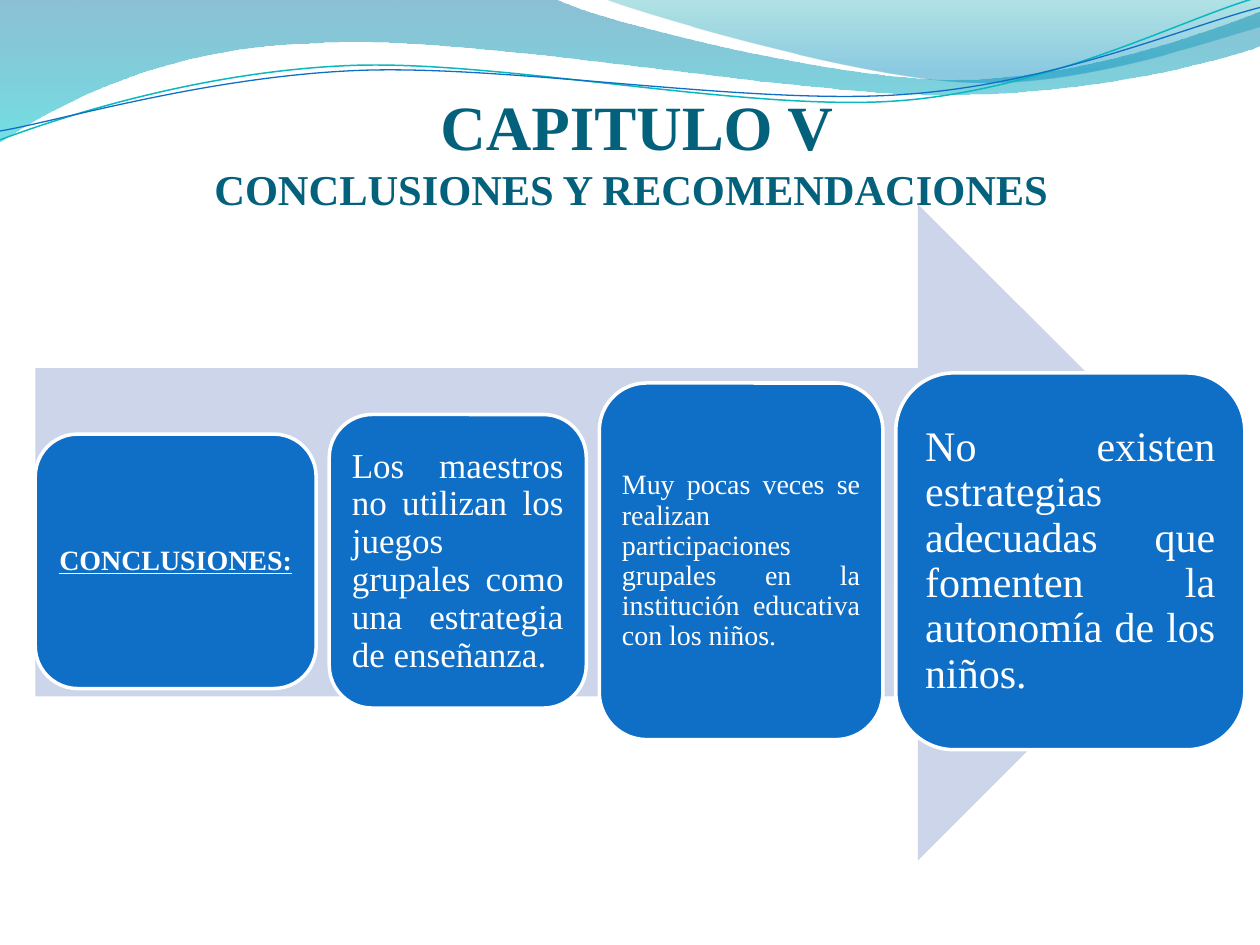
from math import cos, radians, sin

from lxml import etree
from pptx import Presentation
from pptx.dml.color import RGBColor
from pptx.enum.shapes import MSO_SHAPE
from pptx.enum.text import MSO_ANCHOR, PP_ALIGN
from pptx.oxml.ns import qn
from pptx.util import Inches, Pt

ARROW = MSO_SHAPE.RIGHT_ARROW
ROUND = MSO_SHAPE.ROUNDED_RECTANGLE
MIDDLE, BOTTOM = MSO_ANCHOR.MIDDLE, MSO_ANCHOR.BOTTOM
CENTER, JUSTIFY = PP_ALIGN.CENTER, PP_ALIGN.JUSTIFY

COLORS = {
    "title": "04617B", "card": "0F6FC6", "arrow": "CCD5EA", "white": "FFFFFF",
    "teal": "0AB8BF", "deep": "0074A1", "aqua": "00C6CF",
    "green": "00A1A9", "sky": "008BBF",
}
FONT = "Times New Roman"
TILT = 2.7
LEFT, RIGHT, AXIS = 0.28, 9.88, 4.455

WAVES = [
    ([(0, 0), (4.4, -0.01), (4.76, 0.17, 6.64, 0.63, 7.58, 0.63),
      (8.53, 0.63, 9.58, 0.26, 10, 0.09), (10.01, 0.36),
      (9.83, 0.44, 8.7, 0.76, 7.46, 0.75), (6.22, 0.75, 3.82, 0.28, 2.57, 0.34),
      (1.29, 0.36, 0.46, 0.83, -0.01, 1.13), (0, 0)],
     [("deep", 0, 45), ("aqua", 1, 55)]),
    ([(4.79, -0.01), (5.09, 0.11, 6.82, 0.62, 7.69, 0.65),
      (8.56, 0.69, 9.61, 0.32, 10, 0.21), (10, 0), (4.79, -0.01)],
     [("green", 0, 30), ("sky", 0.8, 45)]),
]
LINES = [
    ([(0, 1.11), (0.48, 0.93, 1.58, 0.57, 2.77, 0.52),
      (3.95, 0.47, 5.93, 0.89, 7.13, 0.8), (8.33, 0.71, 9.38, 0.15, 9.98, -0.02)],
     (4.99, 0.58), "teal", 0.85),
    ([(0, 1.04), (0.47, 0.96, 1.64, 0.61, 2.83, 0.56),
      (4.03, 0.51, 5.97, 0.84, 7.17, 0.75), (8.36, 0.67, 9.41, 0.21, 10, 0.06)],
     (5, 0.59), "card", 0.75),
]
CARDS = [
    (2.23, 2.02, 0.07, "CONCLUSIONES:",
     dict(size=16, bold=True, under=True, align=CENTER)),
    (2.04, 2.33, 0.08, "Los maestros no utilizan los juegos grupales como una "
     "estrategia de enseñanza.", dict(size=20)),
    (2.25, 2.83, 0.07, "Muy pocas veces se realizan participaciones grupales en la "
     "institución educativa con los niños.", dict(size=16)),
    (2.77, 2.99, 0.1, "No existen estrategias adecuadas que fomenten la autonomía "
     "de los niños.", dict(size=24)),
]


def tint(name):
    return RGBColor.from_string(COLORS[name])


def write(para, text, size=16, color="white", bold=False, under=False,
          align=JUSTIFY, space=0.9):
    para.alignment = align
    para.line_spacing = space
    run = para.add_run()
    run.text = text
    font = run.font
    font.name, font.size, font.bold, font.underline = FONT, Pt(size), bold, under
    font.color.rgb = tint(color)


def turn(node, pivot):
    px, py = pivot
    c, s = cos(radians(TILT)), sin(radians(TILT))
    spots = []
    for x, y in zip(node[::2], node[1::2]):
        spots += [px + (x - px) * c - (y - py) * s, py + (x - px) * s + (y - py) * c]
    return spots


class Deck:
    def __init__(self):
        self.show = Presentation()
        self.show.slide_width, self.show.slide_height = Inches(10), Inches(7.5)
        self.slide = self.show.slides.add_slide(self.show.slide_layouts[6])

    def outline(self, nodes, close):
        points = [(Inches(x), Inches(y)) for node in nodes
                  for x, y in zip(node[::2], node[1::2])]
        form = self.slide.shapes.build_freeform(*points[0])
        form.add_line_segments(points[1:], close=close)
        shape = form.convert_to_shape()
        shape.shadow.inherit = False
        steps = iter(list(shape.element.iter(qn("a:lnTo"))))
        for node in nodes[1:]:
            first = next(steps)
            if len(node) == 6:
                first.tag = qn("a:cubicBezTo")
                for step in (next(steps), next(steps)):
                    first.append(step[0])
                    step.getparent().remove(step)
        return shape

    def wave(self, nodes, stops):
        shape = self.outline(nodes, True)
        shape.line.fill.background()
        fill = shape.fill
        fill.gradient()
        fill.gradient_angle = 270
        for stop, (color, place, alpha) in zip(fill.gradient_stops, stops):
            stop.color.rgb = tint(color)
            stop.position = place
        tones = shape.element.spPr.iter(qn("a:srgbClr"))
        for tone, (color, place, alpha) in zip(list(tones), stops):
            etree.SubElement(tone, qn("a:alpha")).set("val", str(alpha * 1000))

    def curve(self, nodes, pivot, color, width):
        shape = self.outline([turn(node, pivot) for node in nodes], False)
        shape.rotation = 360 - TILT
        shape.fill.background()
        shape.line.color.rgb = tint(color)
        shape.line.width = Pt(width)

    def block(self, kind, x, y, w, h, color, edge=None):
        shape = self.slide.shapes.add_shape(
            kind, Inches(x), Inches(y), Inches(w), Inches(h))
        shape.shadow.inherit = False
        shape.fill.solid()
        shape.fill.fore_color.rgb = tint(color)
        if edge:
            shape.line.color.rgb = tint(edge)
            shape.line.width = Pt(2)
        else:
            shape.line.fill.background()
        return shape

    def frame(self, shape, inset, anchor):
        frame = shape.text_frame
        frame.word_wrap = True
        frame.vertical_anchor = anchor
        frame.margin_left = frame.margin_right = Inches(inset)
        frame.margin_top = frame.margin_bottom = Inches(inset)
        return frame

    def title(self, first, second):
        box = self.slide.shapes.add_textbox(
            Inches(0.51), Inches(0.68), Inches(9), Inches(1.02))
        para = self.frame(box, 0, BOTTOM).paragraphs[0]
        style = dict(color="title", bold=True, align=CENTER, space=1.0)
        write(para, " ", size=25.2, **style)
        write(para, first, size=36, **style)
        para.add_line_break()
        write(para, second, size=24.3, **style)

    def card(self, x, w, h, inset, text, style):
        shape = self.block(ROUND, x, AXIS - h / 2, w, h, "card", "white")
        write(self.frame(shape, inset, MIDDLE).paragraphs[0], text, **style)


def main():
    deck = Deck()
    for nodes, stops in WAVES:
        deck.wave(nodes, stops)
    for line in LINES:
        deck.curve(*line)
    deck.title("CAPITULO V", "CONCLUSIONES Y RECOMENDACIONES")
    deck.block(ARROW, LEFT, 1.62, 9.61, 5.21, "arrow")
    gap = (RIGHT - LEFT - sum(card[0] for card in CARDS)) / (len(CARDS) - 1)
    x = LEFT
    for w, h, inset, text, style in CARDS:
        deck.card(x, w, h, inset, text, style)
        x += w + gap
    deck.show.save("out.pptx")


if __name__ == "__main__":
    main()
